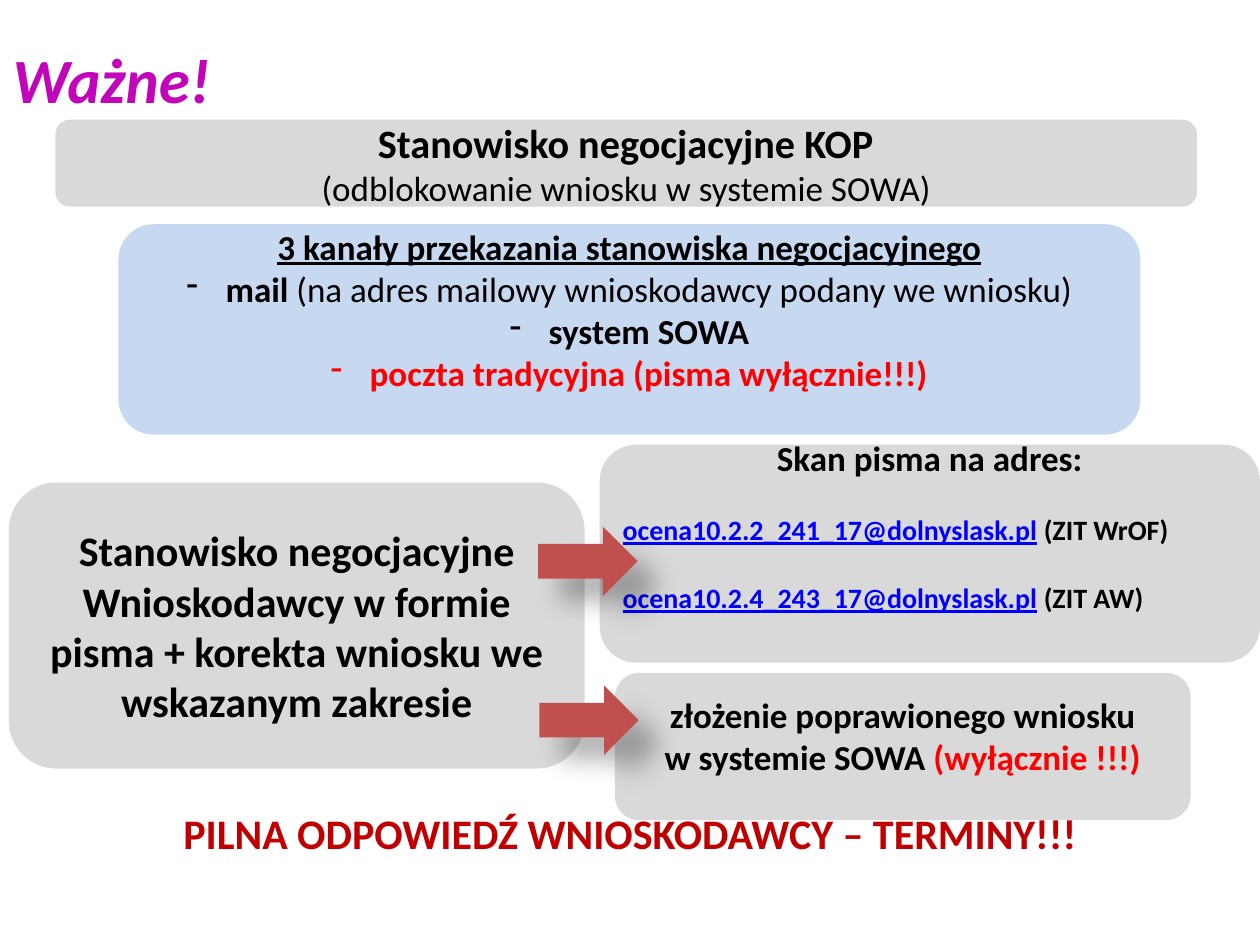
from dataclasses import dataclass

from lxml import etree
from pptx import Presentation
from pptx.dml.color import RGBColor
from pptx.enum.shapes import MSO_SHAPE as Shape
from pptx.enum.text import MSO_ANCHOR as Anchor, MSO_AUTO_SIZE as AutoSize, PP_ALIGN as Align
from pptx.oxml.ns import qn
from pptx.util import Inches, Pt


@dataclass(frozen=True)
class Theme:
    font: str = "Calibri"
    title: str = "C105B8"
    closing: str = "C00000"
    text: str = "000000"
    alert: str = "FF0000"
    link: str = "0000FF"
    panel: str = "D9D9D9"
    channels: str = "C6D9F1"
    arrow: str = "C0504D"
    title_size: float = 36
    large: float = 24
    heading: float = 23
    medium: float = 20
    small: float = 16


THEME = Theme()


def place(shape, box):
    shape.left, shape.top, shape.width, shape.height = map(Inches, box)


def style(font, size=None, color=None, bold=None, italic=None, underline=None):
    font.name = THEME.font
    if size:
        font.size = Pt(size)
    if color:
        font.color.rgb = RGBColor.from_string(color)
    font.bold, font.italic, font.underline = bold, italic, underline


def set_bullet(paragraph, character=None, indent=0):
    """Set a hanging bullet, or none if no character is given."""
    properties = paragraph._p.get_or_add_pPr()
    properties.set("marL", str(Inches(indent)))
    properties.set("indent", str(-Inches(indent)))
    if character:
        etree.SubElement(properties, qn("a:buChar")).set("char", character)
    else:
        etree.SubElement(properties, qn("a:buNone"))


def add_paragraph(frame, runs, size, align=Align.CENTER, color=THEME.text, bold=True,
                  underline=None, bullet=None, space_before=0):
    """Add runs given as strings or as (text, font settings) pairs."""
    first = frame.paragraphs[0]
    paragraph = frame.add_paragraph() if first.runs else first
    paragraph.alignment = align
    if space_before:
        paragraph.space_before = Pt(space_before)
    if bullet:
        set_bullet(paragraph, bullet, indent=0.31)
    style(paragraph.font, size, color, bold, underline=underline)
    for item in runs:
        text, changes = (item, None) if isinstance(item, str) else item
        if text == "\n":
            paragraph.add_line_break()
            continue
        run = paragraph.add_run()
        run.text = text
        if changes:
            style(run.font, **changes)


def add_panel(slide, box, color, bottom_margin=0.05):
    """Add a rounded panel and return its text frame."""
    panel = slide.shapes.add_shape(Shape.ROUNDED_RECTANGLE, *map(Inches, box))
    panel.shadow.inherit = False
    panel.fill.solid()
    panel.fill.fore_color.rgb = RGBColor.from_string(color)
    panel.line.fill.background()
    frame = panel.text_frame
    frame.word_wrap = True
    frame.vertical_anchor = Anchor.MIDDLE
    frame.margin_bottom = Inches(bottom_margin)
    return frame


def add_arrow(slide, box):
    arrow = slide.shapes.add_shape(Shape.RIGHT_ARROW, *map(Inches, box))
    arrow.fill.solid()
    arrow.fill.fore_color.rgb = RGBColor.from_string(THEME.arrow)
    arrow.line.fill.background()
    arrow.shadow.inherit = False
    effects = arrow._element.spPr.find(qn("a:effectLst"))
    shadow = etree.SubElement(effects, qn("a:outerShdw"), blurRad=str(Pt(15)),
                              dist=str(Pt(18)), dir="2700000", rotWithShape="0")
    color = etree.SubElement(shadow, qn("a:srgbClr"), val=THEME.text)
    etree.SubElement(color, qn("a:alpha"), val="30000")


def fill_title(slide, box):
    title = slide.shapes.title
    place(title, box)
    frame = title.text_frame
    frame.text = "Ważne!"
    frame.vertical_anchor = Anchor.MIDDLE
    paragraph = frame.paragraphs[0]
    paragraph.alignment = Align.LEFT
    style(paragraph.font, THEME.title_size, THEME.title, bold=True, italic=True)


def fill_closing_line(slide, box):
    body = slide.placeholders[1]
    place(body, box)
    frame = body.text_frame
    frame.auto_size = AutoSize.NONE
    frame.vertical_anchor = Anchor.BOTTOM
    frame.margin_bottom = Inches(0.34)
    frame.paragraphs[0].space_before = Pt(0)
    set_bullet(frame.paragraphs[0])
    add_paragraph(frame, ["PILNA ODPOWIEDŹ WNIOSKODAWCY – TERMINY!!!"],
                  THEME.large, color=THEME.closing)


def add_committee_position(slide, box):
    frame = add_panel(slide, box, THEME.panel)
    add_paragraph(frame, ["Stanowisko negocjacyjne KOP"], THEME.heading)
    add_paragraph(frame, ["(odblokowanie wniosku w systemie SOWA)"], THEME.medium, bold=False)


def add_applicant_position(slide, box):
    frame = add_panel(slide, box, THEME.panel)
    add_paragraph(frame, ["Stanowisko negocjacyjne Wnioskodawcy w formie pisma "
                          "+ korekta wniosku we wskazanym zakresie"], THEME.large)


def add_channels(slide, box):
    frame = add_panel(slide, box, THEME.channels, bottom_margin=0.37)
    add_paragraph(frame, ["3 kanały przekazania stanowiska negocjacyjnego"],
                  THEME.medium, underline=True)
    address = "(na adres mailowy wnioskodawcy podany we wniosku)"
    channels = [
        (["mail ", (address, {"bold": False})], THEME.text),
        (["system SOWA"], THEME.text),
        (["poczta tradycyjna (pisma wyłącznie!!!)"], THEME.alert),
    ]
    for runs, color in channels:
        add_paragraph(frame, runs, THEME.medium, color=color, bullet="-")


def add_scan_addresses(slide, box):
    frame = add_panel(slide, box, THEME.panel, bottom_margin=0.5)
    add_paragraph(frame, ["Skan pisma na adres:"], THEME.medium)
    addresses = [
        ("ocena10.2.2_241_17@dolnyslask.pl", " (ZIT WrOF)"),
        ("ocena10.2.4_243_17@dolnyslask.pl", " (ZIT AW)"),
    ]
    for address, area in addresses:
        link = (address, {"color": THEME.link, "underline": True})
        add_paragraph(frame, [link, area], THEME.small, Align.LEFT, space_before=19.5)


def add_corrected_application(slide, box):
    frame = add_panel(slide, box, THEME.panel, bottom_margin=0.23)
    add_paragraph(frame, ["złożenie poprawionego wniosku", "\n", "w systemie SOWA ",
                          ("(wyłącznie !!!)", {"color": THEME.alert})], THEME.medium)


def main():
    presentation = Presentation()
    presentation.slide_width, presentation.slide_height = Inches(10), Inches(7.5)
    slide = presentation.slides.add_slide(presentation.slide_layouts[1])
    fill_title(slide, (0, 0, 9, 1.25))
    fill_closing_line(slide, (0.5, 1.25, 9, 5.9))
    add_committee_position(slide, (0.44, 0.95, 9.06, 0.69))
    add_applicant_position(slide, (0.07, 3.83, 4.57, 2.27))
    add_channels(slide, (0.94, 1.78, 8.11, 1.67))
    add_scan_addresses(slide, (4.76, 3.53, 5.24, 1.73))
    add_arrow(slide, (4.27, 4.18, 0.79, 0.55))
    add_corrected_application(slide, (4.88, 5.34, 4.57, 1.17))
    add_arrow(slide, (4.28, 5.44, 0.79, 0.55))
    presentation.save("out.pptx")


if __name__ == "__main__":
    main()
